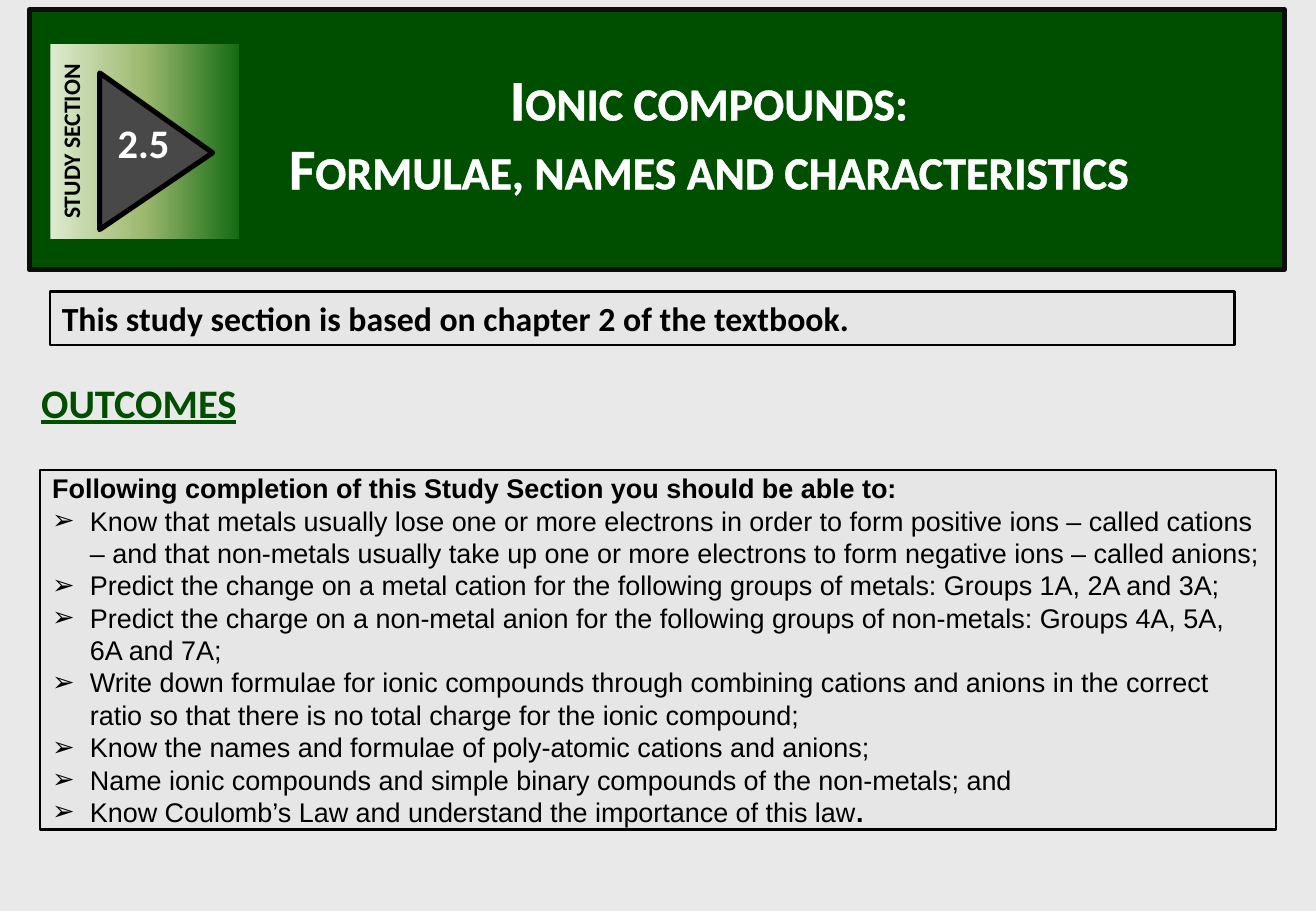
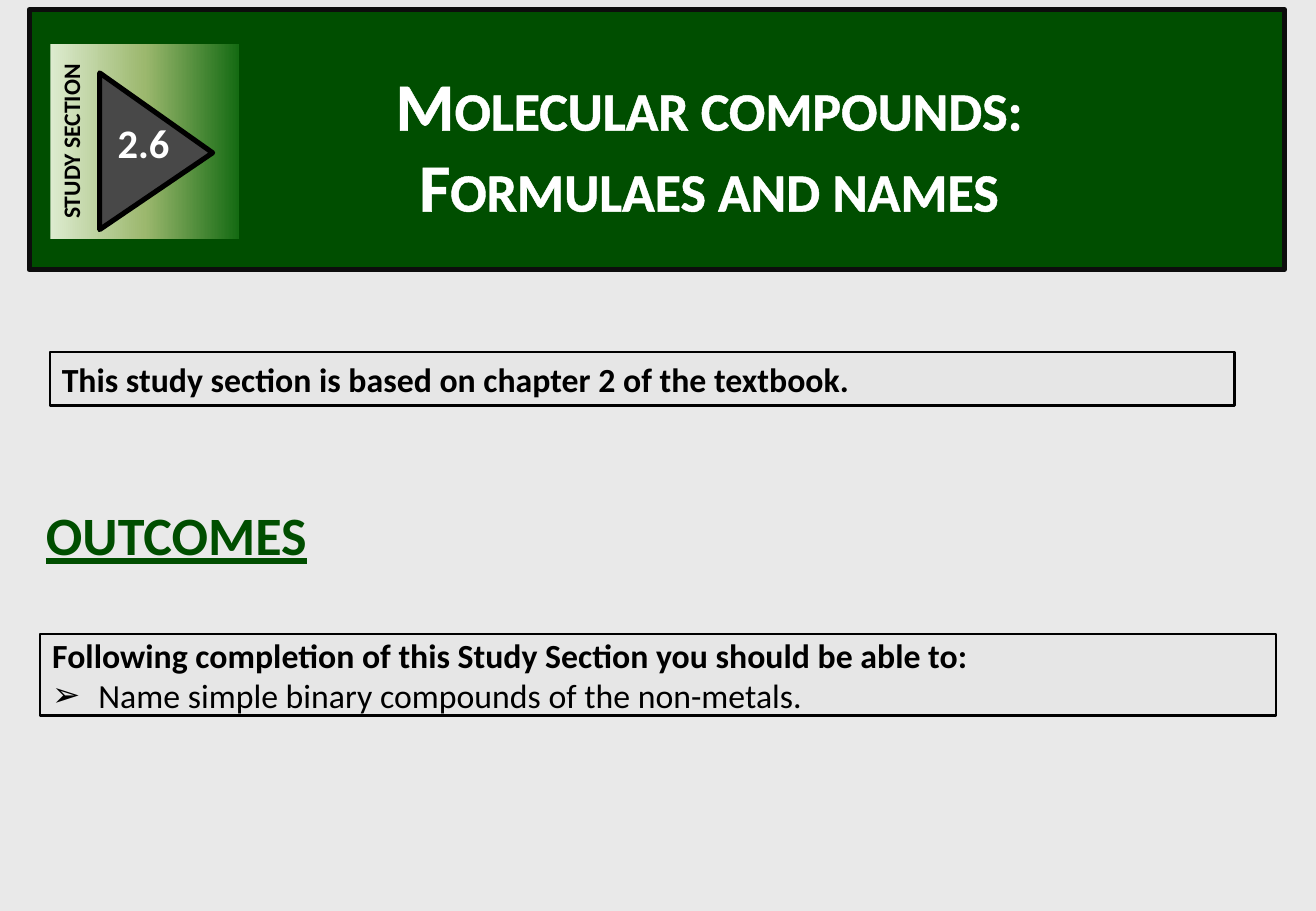
from lxml import etree
from pptx import Presentation
from pptx.dml.color import RGBColor
from pptx.enum.shapes import MSO_SHAPE as SHAPE
from pptx.enum.text import MSO_ANCHOR as ANCHOR, MSO_AUTO_SIZE as AUTO, PP_ALIGN as ALIGN
from pptx.oxml import parse_xml
from pptx.oxml.ns import nsdecls, qn
from pptx.util import Inches, Pt

COLORS = {
    "page": "E9E9E9",
    "green": "004E00",
    "band_line": "0D0D0D",
    "triangle": "484848",
    "box": "E6E6E6",
    "black": "000000",
    "white": "FFFFFF",
}
TILE_STOPS = [(0, "DDEBCF"), (50, "9CB86E"), (100, "156B13")]
BASIS = "This study section is based on chapter 2 of the textbook."
LEAD = "Following completion of this Study Section you should be able to:"

SECTIONS = [
    {
        "number": "2.5",
        "title": ["Ionic compounds:", "Formulae, names and characteristics"],
        "title_size": 34, "title_height": 1.25,
        "basis_top": 2.4,
        "heading_at": (0.24, 3.06, 2.89, 0.5), "heading_size": 24,
        "list_top": 3.82, "list_height": 3.06,
        "list_font": "Arial", "list_size": 16, "indent": 0.31,
        "outcomes": [
            ["Know that metals usually lose one or more electrons in order to form positive ions "
             "– called cations – and that non-metals usually take up one or more electrons to "
             "form negative ions – called anions;"],
            ["Predict the change on a metal cation for the following groups of metals: "
             "Groups 1A, 2A and 3A;"],
            ["Predict the charge on a non-metal anion for the following groups of non-metals: "
             "Groups 4A, 5A, 6A and 7A;"],
            ["Write down formulae for ionic compounds through combining cations and anions in "
             "the correct ratio so that there is no total charge for the ionic compound;"],
            ["Know the names and formulae of poly-atomic cations and anions;"],
            ["Name ionic compounds and simple binary compounds of the non-metals; and"],
            ["Know Coulomb’s Law and understand the importance of this law", "."],
        ],
    },
    {
        "number": "2.6",
        "title": ["Molecular compounds:", "Formulaes and names"],
        "title_size": 40, "title_height": 1.45,
        "basis_top": 2.9,
        "heading_at": (0.28, 4.08, 2.89, 0.64), "heading_size": 32,
        "list_top": 5.17, "list_height": 0.77,
        "list_font": "Calibri", "list_size": 20, "indent": 0.38,
        "outcomes": [["Name simple binary compounds of the non-metals."]],
    },
]


def rgb(name):
    return RGBColor.from_string(COLORS[name])


def place(sp, left, top, width, height):
    sp.left, sp.top = Inches(left), Inches(top)
    sp.width, sp.height = Inches(width), Inches(height)


def paint(sp, fill, line, weight):
    sp.fill.solid()
    sp.fill.fore_color.rgb = rgb(fill)
    sp.line.color.rgb = rgb(line)
    sp.line.width = Pt(weight)


def add_block(shapes, kind, at, rotation=0):
    sp = shapes.add_shape(kind, *map(Inches, at))
    sp.shadow.inherit = False
    sp.rotation = rotation
    return sp


def frame(sp, anchor=ANCHOR.TOP, wrap=True):
    tf = sp.text_frame
    tf.word_wrap = wrap
    tf.auto_size = AUTO.SHAPE_TO_FIT_TEXT
    tf.vertical_anchor = anchor
    return tf


def paragraph(tf, first, align=ALIGN.LEFT):
    p = tf.paragraphs[0] if first else tf.add_paragraph()
    p.alignment = align
    p.space_before = Pt(0)
    return p


def add_run(p, text, size, color="black", bold=True, font="Calibri"):
    r = p.add_run()
    r.text = text
    r.font.name, r.font.size, r.font.bold = font, Pt(size), bold
    r.font.color.rgb = rgb(color)
    return r


def outline(r, color, weight):
    """Draw a thin line round the letters of a run."""
    r.font._element.insert(0, parse_xml(
        f'<a:ln {nsdecls("a")} w="{Pt(weight)}"><a:solidFill>'
        f'<a:srgbClr val="{COLORS[color]}"/></a:solidFill></a:ln>'))


def set_bullet(p, indent, char=None):
    """Give a paragraph a hanging bullet, or remove the inherited one."""
    pPr = p._p.get_or_add_pPr()
    pPr.set("marL", str(Inches(indent)))
    pPr.set("indent", str(-Inches(indent)))
    if char:
        etree.SubElement(pPr, qn("a:buFont")).set("typeface", "Arial")
        etree.SubElement(pPr, qn("a:buChar")).set("char", char)
    else:
        etree.SubElement(pPr, qn("a:buNone"))


def fill_gradient(sp, stops):
    """Fill a shape from its own top to its bottom."""
    sp.fill.background()
    spPr = sp._element.spPr
    stop_xml = "".join(f'<a:gs pos="{pos * 1000}"><a:srgbClr val="{color}"/></a:gs>'
                       for pos, color in stops)
    spPr.replace(spPr.find(qn("a:noFill")), parse_xml(
        f'<a:gradFill {nsdecls("a")} rotWithShape="1"><a:gsLst>{stop_xml}</a:gsLst>'
        '<a:lin ang="5400000" scaled="0"/></a:gradFill>'))


def add_band(slide, number):
    """Put the green band with its section badge behind the title."""
    grp = slide.shapes.add_group_shape()
    band = add_block(grp.shapes, SHAPE.RECTANGLE, (0.24, 0.08, 10.33, 2.14))
    paint(band, "green", "band_line", 3)

    tile = add_block(grp.shapes, SHAPE.RECTANGLE, (0.39, 0.39, 1.6, 1.55), 270)
    fill_gradient(tile, TILE_STOPS)
    tile.line.fill.background()
    add_run(paragraph(frame(tile), True, ALIGN.CENTER), "STUDY SECTION", 14)

    triangle = add_block(grp.shapes, SHAPE.ISOSCELES_TRIANGLE, (0.64, 0.78, 1.29, 0.93), 90)
    triangle.adjustments[0] = 0.51
    paint(triangle, "triangle", "black", 3)

    label = grp.shapes.add_textbox(*map(Inches, (0.87, 0.92, 0.63, 0.51)))
    add_run(paragraph(frame(label, wrap=False), True), number, 24, "white")
    slide.shapes._spTree.insert(2, grp._element)


def set_title(slide, lines, size, height):
    title = slide.shapes.title
    place(title, 2.17, 0.47, 7.33, height)
    tf = frame(title)
    for i, line in enumerate(lines):
        r = add_run(paragraph(tf, i == 0, ALIGN.CENTER), line, size, "white")
        r.font._element.set("cap", "small")
        outline(r, "white", 0.75)


def add_basis(slide, top):
    sp = add_block(slide.shapes, SHAPE.RECTANGLE, (0.41, top, 9.75, 0.44))
    paint(sp, "box", "black", 1.5)
    add_run(paragraph(frame(sp, ANCHOR.MIDDLE), True), BASIS, 20)


def add_heading(slide, at, size):
    sp = slide.shapes.add_textbox(*map(Inches, at))
    r = add_run(paragraph(frame(sp), True), "OUTCOMES", size, "green")
    r.font.underline = True
    outline(r, "black", 0.25)


def set_outcomes(slide, section):
    body = slide.placeholders[1]
    place(body, 0.33, section["list_top"], 10.17, section["list_height"])
    paint(body, "box", "black", 1.5)
    tf = frame(body, ANCHOR.MIDDLE)
    font, size = section["list_font"], section["list_size"]
    p = paragraph(tf, True)
    set_bullet(p, 0)
    add_run(p, LEAD, size, font=font)
    for runs in section["outcomes"]:
        p = paragraph(tf, False)
        set_bullet(p, section["indent"], "➢")
        for text in runs:
            add_run(p, text, size, bold=text == ".", font=font)


def add_section(prs, section):
    slide = prs.slides.add_slide(prs.slide_layouts[1])
    set_title(slide, section["title"], section["title_size"], section["title_height"])
    add_band(slide, section["number"])
    add_basis(slide, section["basis_top"])
    add_heading(slide, section["heading_at"], section["heading_size"])
    set_outcomes(slide, section)


def main():
    prs = Presentation()
    prs.slide_width, prs.slide_height = Inches(10.83), Inches(7.5)
    background = prs.slide_master.background.fill
    background.solid()
    background.fore_color.rgb = rgb("page")
    for section in SECTIONS:
        add_section(prs, section)
    prs.save("out.pptx")


if __name__ == "__main__":
    main()
